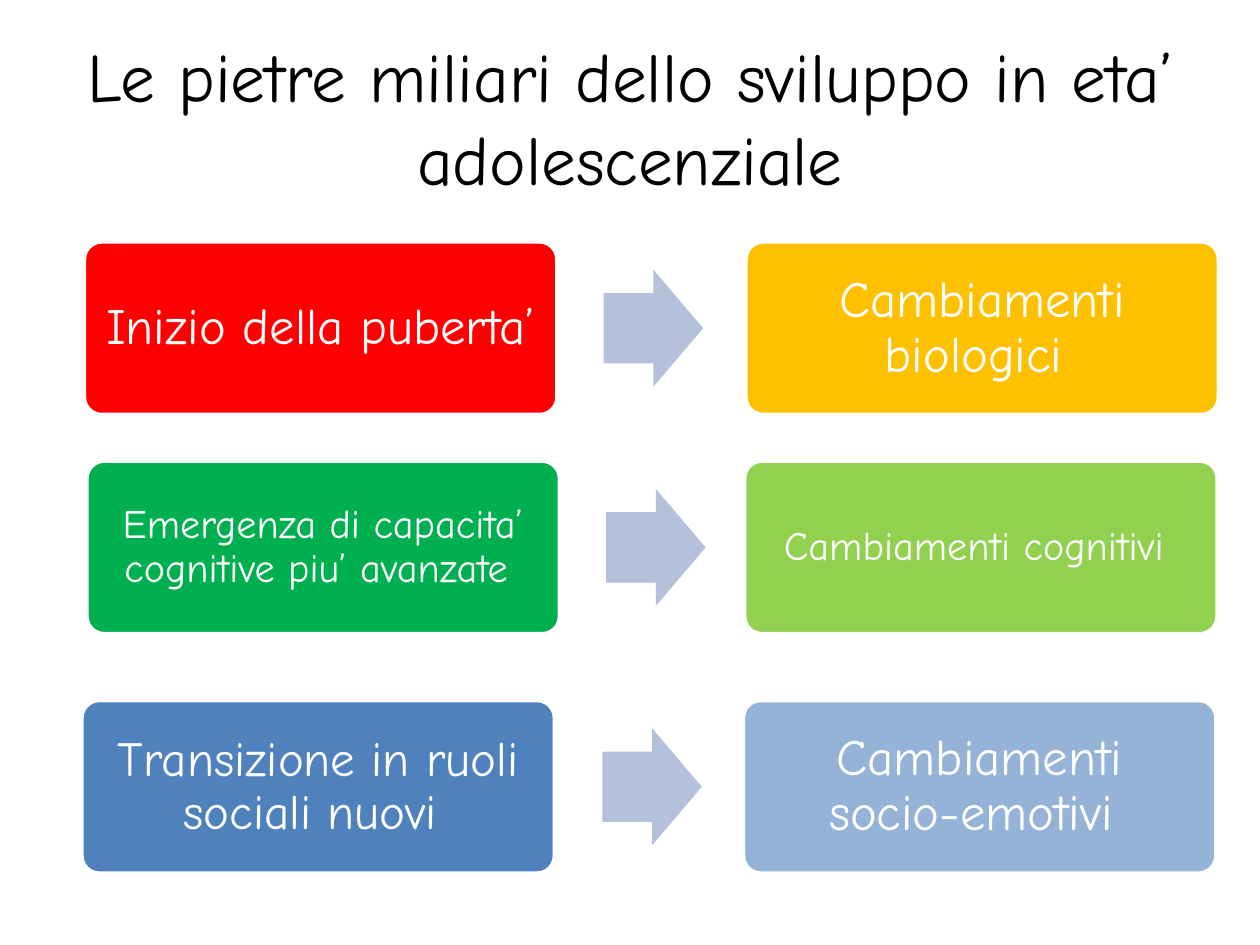
from pptx import Presentation
from pptx import util as u
from pptx.dml.color import RGBColor
from pptx.enum import shapes, text

BLACK, WHITE = RGBColor(0, 0, 0), RGBColor(255, 255, 255)
RED, AMBER = RGBColor(0xFF, 0, 0), RGBColor(0xFF, 0xC0, 0)
GREEN, LIME = RGBColor(0, 0xB0, 0x50), RGBColor(0x92, 0xD0, 0x50)
BLUE, SKY = RGBColor(0x4F, 0x81, 0xBD), RGBColor(0x95, 0xB3, 0xD7)
ARROW_BLUE = RGBColor(0xB3, 0xC1, 0xDB)
FONT = "Comic Neue"

# Content: each milestone leads to a change, as (wording, size, fill)
TITLE = "Le pietre miliari dello sviluppo in eta’ adolescenziale"
MILESTONES = [
    # top, lefts of (milestone, arrow, change), inset, milestone, change
    (1.92, (0.67, 4.79, 5.92), 0.12,
     ("Inizio della puberta’ ", 29, RED),
     ("Cambiamenti biologici ", 29, AMBER)),
    (3.66, (0.69, 4.81, 5.91), 0.10,
     ("Emergenza di capacita’ cognitive piu’ avanzate ", 23, GREEN),
     ("Cambiamenti cognitivi ", 23, LIME)),
    (5.56, (0.65, 4.78, 5.90), 0.12,
     ("Transizione in ruoli sociali nuovi ", 28, BLUE),
     ("Cambiamenti socio-emotivi ", 29, SKY)),
]
CARD_W, CARD_H = 3.75, 1.37
ARROW_W, ARROW_H = 0.79, 0.93


def apply(target, values):
    for name, value in values.items():
        setattr(target, name, value)


def write(frame, wording, size, color, spacing=None):
    apply(frame, {"text": wording, "word_wrap": True,
                  "auto_size": text.MSO_AUTO_SIZE.NONE,
                  "vertical_anchor": text.MSO_ANCHOR.MIDDLE})
    paragraph = frame.paragraphs[0]
    apply(paragraph, {"alignment": text.PP_ALIGN.CENTER, "line_spacing": spacing})
    font = paragraph.runs[0].font
    apply(font, {"name": FONT, "size": u.Pt(size)})
    font.color.rgb = color


def add_part(slide, preset, box, fill, adjustments):
    part = slide.shapes.add_shape(preset, *map(u.Inches, box))
    part.shadow.inherit = False
    part.fill.solid()
    part.fill.fore_color.rgb = fill
    for i, value in enumerate(adjustments):
        part.adjustments[i] = value
    return part


def add_card(slide, left, top, inset, wording, size, fill):
    card = add_part(slide, shapes.MSO_SHAPE.ROUNDED_RECTANGLE,
                    (left, top, CARD_W, CARD_H), fill, [0.1])
    card.line.color.rgb = WHITE
    card.line.width = u.Pt(2)
    sides = ("left", "top", "right", "bottom")
    apply(card.text_frame, {f"margin_{side}": u.Inches(inset) for side in sides})
    write(card.text_frame, wording, size, WHITE, 0.9)


def main():
    deck = Presentation()
    apply(deck, {"slide_width": u.Inches(10), "slide_height": u.Inches(7.5)})
    slide = deck.slides.add_slide(deck.slide_layouts[5])

    # Title
    title = slide.shapes.title
    apply(title, {"left": u.Inches(0.5), "top": u.Inches(0.3),
                  "width": u.Inches(9), "height": u.Inches(1.25)})
    write(title.text_frame, TITLE, 39.6, BLACK)

    # Rows: milestone, arrow, change
    for top, (start, middle, end), inset, milestone, change in MILESTONES:
        add_card(slide, start, top, inset, *milestone)
        arrow_top = top + (CARD_H - ARROW_H) / 2
        arrow = add_part(slide, shapes.MSO_SHAPE.RIGHT_ARROW,
                         (middle, arrow_top, ARROW_W, ARROW_H),
                         ARROW_BLUE, [0.6, 0.5])
        arrow.line.fill.background()
        add_card(slide, end, top, inset, *change)

    deck.save("out.pptx")


if __name__ == "__main__":
    main()
